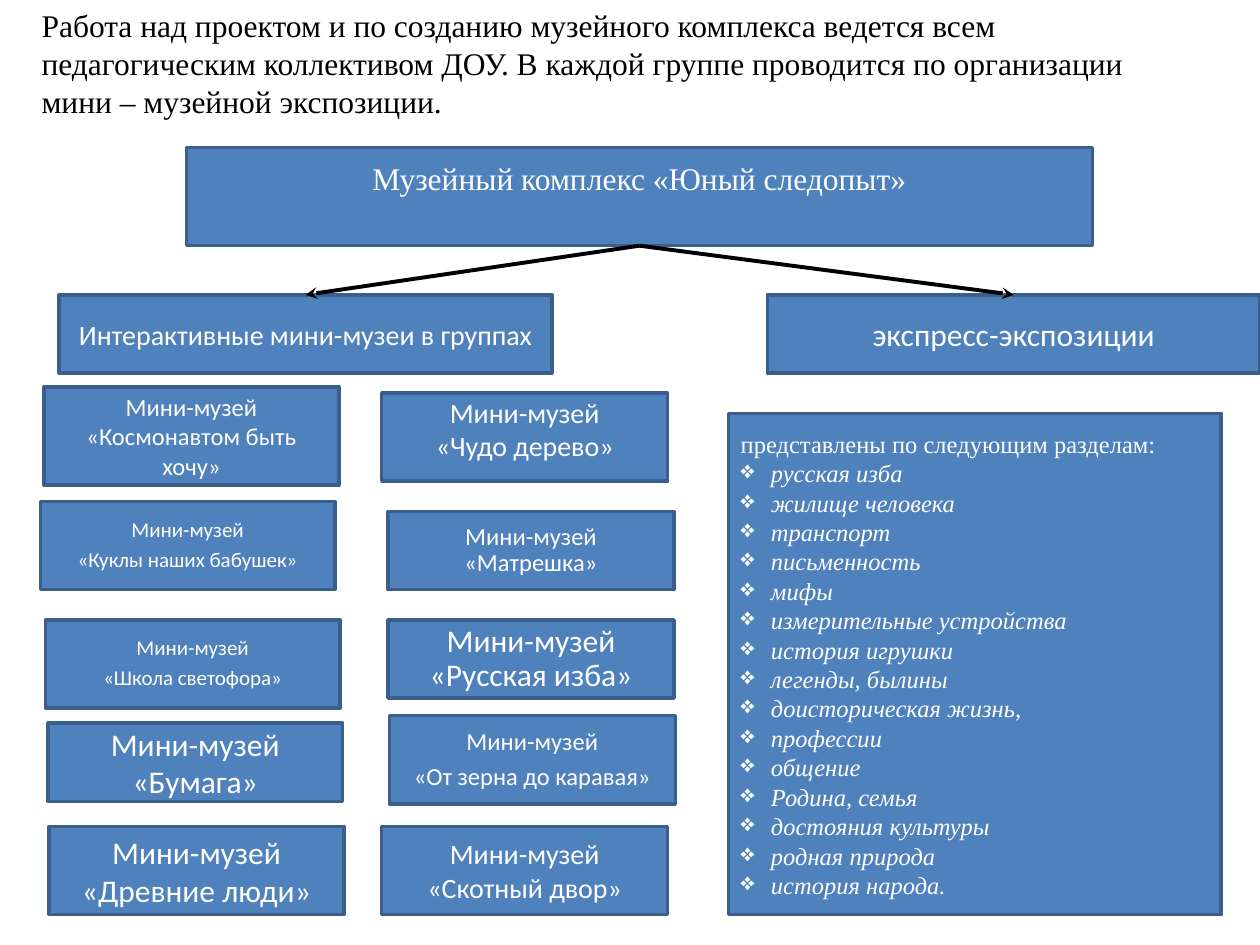
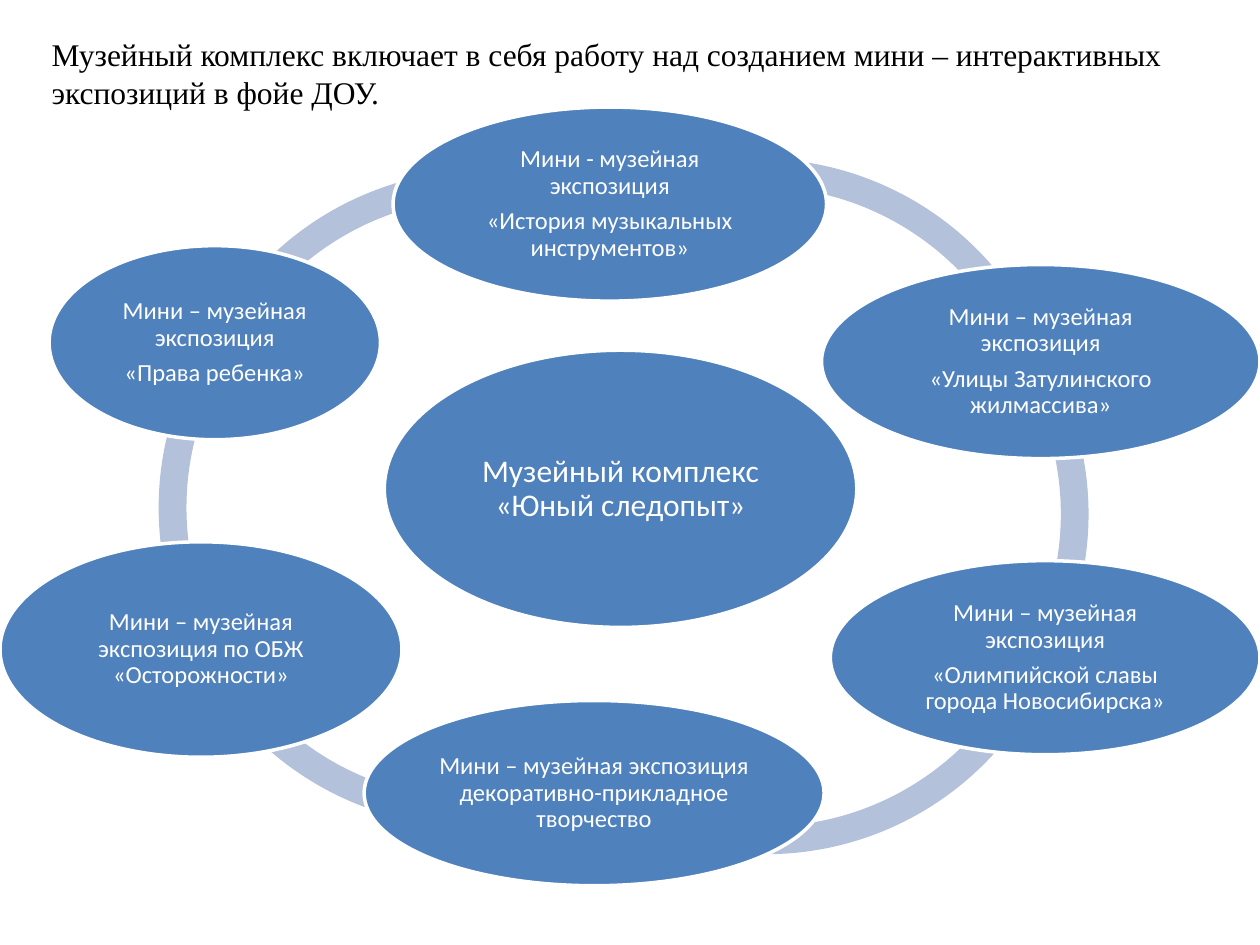
import pptx
import pptx.dml.color
import pptx.enum.shapes
import pptx.enum.text
import pptx.oxml.ns
import pptx.util
from dataclasses import dataclass
from lxml import etree

Inches = pptx.util.Inches
Pt = pptx.util.Pt
RGBColor = pptx.dml.color.RGBColor
Align = pptx.enum.text.PP_ALIGN
Anchor = pptx.enum.text.MSO_ANCHOR
Shape = pptx.enum.shapes.MSO_SHAPE


@dataclass(frozen=True)
class Theme:
    blue: RGBColor = RGBColor(0x4F, 0x81, 0xBD)
    border: RGBColor = RGBColor(0x3A, 0x5F, 0x8C)
    ring: RGBColor = RGBColor(0xB3, 0xC1, 0xDB)
    white: RGBColor = RGBColor(0xFF, 0xFF, 0xFF)
    black: RGBColor = RGBColor(0x00, 0x00, 0x00)
    serif: str = "Times New Roman"
    sans: str = "Calibri"
    large: int = 18
    medium: int = 16
    small: int = 14
    tiny: int = 12


theme = Theme()


def add_title_slide(title, left, top, width, height):
    slide = presentation.slides.add_slide(presentation.slide_layouts[5])
    placeholder = slide.shapes.title
    placeholder.left, placeholder.top = Inches(left), Inches(top)
    placeholder.width, placeholder.height = Inches(width), Inches(height)
    frame = placeholder.text_frame
    frame.text = title
    frame.word_wrap = True
    frame.auto_size = pptx.enum.text.MSO_AUTO_SIZE.NONE
    frame.vertical_anchor = Anchor.TOP
    paragraph = frame.paragraphs[0]
    paragraph.alignment = Align.LEFT
    font = paragraph.runs[0].font
    font.name, font.size, font.color.rgb = theme.serif, Pt(theme.large), theme.black
    return slide


def add_box(slide, kind, place, lines, size, line_color, face=theme.sans, spaced=False):
    shape = slide.shapes.add_shape(kind, *[Inches(value) for value in place])
    shape.shadow.inherit = False
    shape.fill.solid()
    shape.fill.fore_color.rgb = theme.blue
    shape.line.color.rgb = line_color
    shape.line.width = Pt(2)
    frame = shape.text_frame
    frame.word_wrap = True
    frame.vertical_anchor = Anchor.MIDDLE
    frame.text = "\n".join(lines)
    for paragraph in frame.paragraphs:
        paragraph.alignment = Align.CENTER
        if spaced:
            paragraph.line_spacing = 0.9
            paragraph.space_after = Pt(0.35 * size)
        font = paragraph.runs[0].font
        font.name, font.size, font.color.rgb = face, Pt(size), theme.white
    return shape


presentation = pptx.Presentation()
presentation.slide_width = Inches(10)
presentation.slide_height = Inches(7.5)

slide = add_title_slide(
    "Работа над проектом и по созданию музейного комплекса ведется всем "
    "педагогическим коллективом ДОУ. В каждой группе проводится по организации "
    "мини – музейной экспозиции.",
    0.23, 0, 9.22, 1.01,
)

complex_box = add_box(slide, Shape.RECTANGLE, (1.48, 1.17, 7.19, 0.78),
                      ["Музейный комплекс «Юный следопыт»"], theme.large, theme.border, theme.serif)
complex_box.text_frame.margin_bottom = Inches(0.34)

branches = [
    (0.47, "Интерактивные мини-музеи в группах", theme.medium),
    (6.09, "экспресс-экспозиции", theme.large),
]
for left, label, size in branches:
    branch = add_box(slide, Shape.RECTANGLE, (left, 2.34, 3.91, 0.62), [label], size, theme.border)
    arrow = slide.shapes.add_connector(pptx.enum.shapes.MSO_CONNECTOR.STRAIGHT, 0, 0, 0, 0)
    arrow.begin_connect(complex_box, 2)
    arrow.end_connect(branch, 0)
    arrow.line.color.rgb = theme.black
    arrow.line.width = Pt(2.25)
    line = arrow.line._get_or_add_ln()
    etree.SubElement(line, pptx.oxml.ns.qn("a:tailEnd"), type="stealth")
    etree.SubElement(arrow._element.spPr, pptx.oxml.ns.qn("a:effectLst"))

left_width, right_width = 2.34, 2.27
museums = [
    (0.35, 3.07, left_width, 0.78, ["Мини-музей", "«Космонавтом быть хочу»"], theme.small, False),
    (0.32, 3.98, left_width, 0.7, ["Мини-музей", "«Куклы наших бабушек»"], theme.tiny, True),
    (0.36, 4.92, left_width, 0.7, ["Мини-музей", "«Школа светофора»"], theme.tiny, True),
    (0.38, 5.74, left_width, 0.62, ["Мини-музей «Бумага»"], theme.large, False),
    (0.39, 6.56, left_width, 0.7, ["Мини-музей «Древние люди»"], theme.large, False),
    (3.03, 3.12, right_width, 0.7, ["Мини-музей", "«Чудо дерево»"], theme.medium, False),
    (3.08, 4.06, right_width, 0.62, ["Мини-музей «Матрешка»"], theme.small, True),
    (3.08, 4.92, right_width, 0.62, ["Мини-музей «Русская изба»"], theme.large, True),
    (3.09, 5.68, right_width, 0.7, ["Мини-музей", "«От зерна до каравая»"], theme.small, True),
    (3.03, 6.56, right_width, 0.7, ["Мини-музей «Скотный двор»"], theme.medium, False),
]
for *place, lines, size, spaced in museums:
    museum = add_box(slide, Shape.RECTANGLE, place, lines, size, theme.border, spaced=spaced)
    if "«Чудо дерево»" in lines:
        museum.text_frame.margin_bottom = Inches(0.18)

sections = [
    "русская изба", "жилище человека", "транспорт", "письменность", "мифы",
    "измерительные устройства", "история игрушки", "легенды, былины",
    "доисторическая жизнь,", "профессии", "общение", "Родина, семья",
    "достояния культуры", "родная природа", "история народа.",
]
section_box = add_box(slide, Shape.RECTANGLE, (5.78, 3.28, 3.91, 3.98),
                      ["представлены по следующим разделам:"] + sections,
                      theme.small, theme.border, theme.serif)
for index, paragraph in enumerate(section_box.text_frame.paragraphs):
    paragraph.alignment = Align.LEFT
    if index > 0:
        properties = paragraph._p.get_or_add_pPr()
        properties.set("marL", str(Inches(0.24)))
        properties.set("indent", str(-Inches(0.24)))
        etree.SubElement(properties, pptx.oxml.ns.qn("a:buChar"), char="❖")
        paragraph.runs[0].font.italic = True

slide = add_title_slide(
    "Музейный комплекс включает в себя работу над созданием мини – интерактивных "
    "экспозиций в фойе ДОУ.",
    0.31, 0.23, 9.22, 0.71,
)

ring_size = 4.9
ring_arcs = [
    (1.4, 1.35, 124.02, 176.8),
    (1.26, 1.58, 91.23, 127.91),
    (1.3, 1.66, 39.71, 92.44),
    (3.63, 1.88, 13.08, 74.82),
    (3.74, 1.63, 197.82, 17.03),
    (3.57, 1.26, 144.38, 203.75),
]
for left, top, start, end in ring_arcs:
    arc = slide.shapes.add_shape(Shape.BLOCK_ARC, Inches(left), Inches(top),
                                 Inches(ring_size), Inches(ring_size))
    arc.shadow.inherit = False
    arc.adjustments[0], arc.adjustments[1], arc.adjustments[2] = start, end, 0.045
    arc.fill.solid()
    arc.fill.fore_color.rgb = theme.ring
    arc.line.fill.background()

exhibition = "Мини – музейная экспозиция"
ovals = [
    (3.05, 2.78, 3.75, 2.2, ["Музейный комплекс «Юный следопыт»"], theme.large),
    (3.12, 0.85, 3.44, 1.54, ["Мини - музейная экспозиция", "«История музыкальных инструментов»"], theme.small),
    (6.52, 2.1, 3.48, 1.54, [exhibition, "«Улицы Затулинского жилмассива»"], theme.small),
    (6.59, 4.45, 3.41, 1.54, [exhibition, "«Олимпийской славы города Новосибирска»"], theme.small),
    (2.89, 5.56, 3.65, 1.47, [exhibition + " декоративно-прикладное творчество"], theme.small),
    (0, 4.3, 3.19, 1.71, [exhibition + " по ОБЖ «Осторожности»"], theme.small),
    (0.39, 1.95, 2.63, 1.54, [exhibition, "«Права ребенка»"], theme.small),
]
for *place, lines, size in ovals:
    oval = add_box(slide, Shape.OVAL, place, lines, size, theme.white, spaced=True)
    frame = oval.text_frame
    frame.margin_left = frame.margin_right = Inches(0.02)
    frame.margin_top = frame.margin_bottom = Inches(0.02)

presentation.save("out.pptx")
